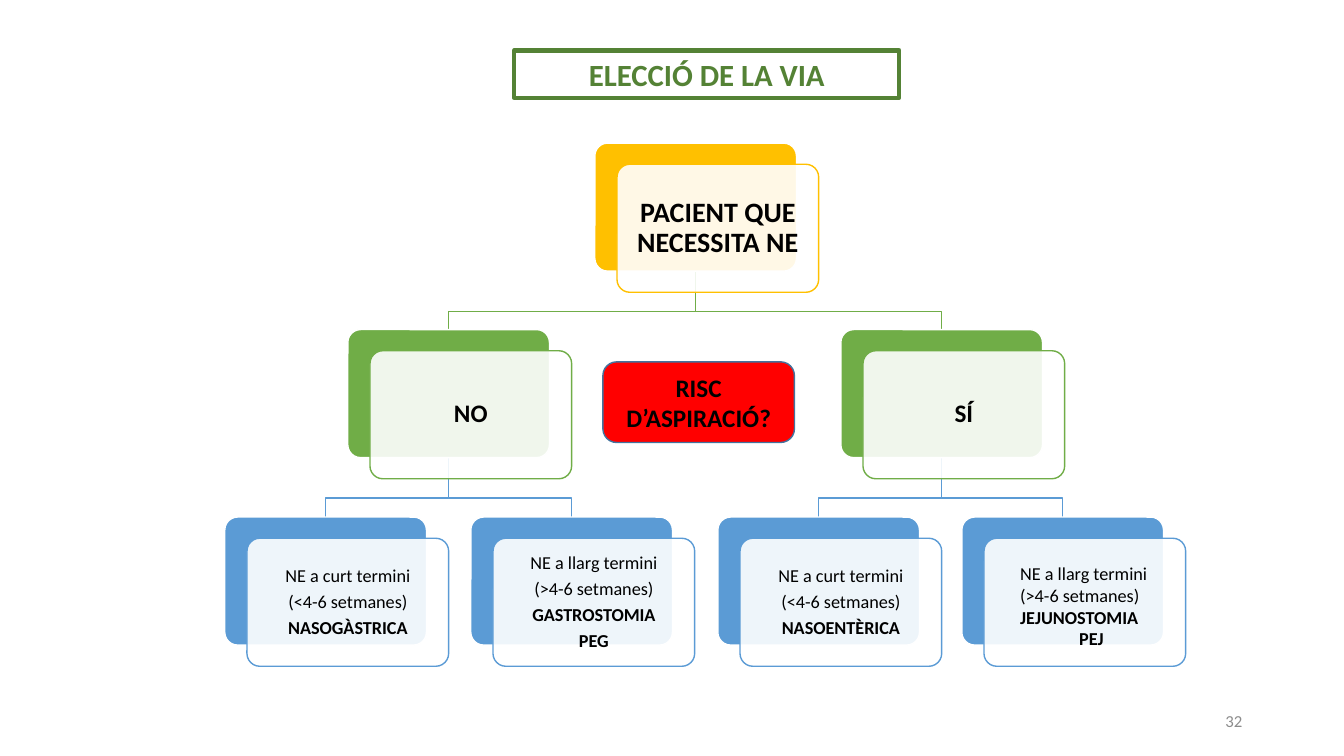
from lxml import etree
from pptx import Presentation
from pptx.dml.color import RGBColor
from pptx.enum import shapes, text
from pptx.oxml import ns
from pptx.util import Inches, Pt


class Theme:
    font = "Calibri"
    black, white, gray = "000000", "FFFFFF", "8C8C8C"
    gold, green, blue = "FFC000", "70AD47", "5B9BD5"
    red, edge, dark = "FF0000", "43739E", "548235"
    title, root, branch, leaf, small = 22, 20, 18, 13, 12


def write(shape, rows, size, color=Theme.black, inset=0.1, gap=False, align="CENTER"):
    """Fill a shape with rows of (words, bold); gap spaces them as in the tree."""
    frame = shape.text_frame
    frame.word_wrap = True
    frame.auto_size = text.MSO_AUTO_SIZE.NONE
    frame.vertical_anchor = text.MSO_ANCHOR.MIDDLE
    frame.margin_left = frame.margin_right = Inches(inset)
    frame.margin_top = frame.margin_bottom = Inches(min(inset, 0.05))
    for i, (words, bold) in enumerate(rows):
        para = frame.paragraphs[0] if i == 0 else frame.add_paragraph()
        para.alignment = getattr(text.PP_ALIGN, align)
        para.line_spacing = 0.9 if gap else 1.0
        para.space_before = Pt(0)
        para.space_after = Pt(size * 0.35 if gap else 0)
        run = para.add_run()
        run.text = words
        run.font.name, run.font.size, run.font.bold = Theme.font, Pt(size), bold
        run.font.color.rgb = RGBColor.from_string(color)


def box(x, y, w, h, fill, line, round=0.1):
    shape = slide.shapes.add_shape(
        shapes.MSO_SHAPE.ROUNDED_RECTANGLE, Inches(x), Inches(y), Inches(w), Inches(h))
    shape.adjustments[0] = round
    shape.shadow.inherit = False
    shape.fill.solid()
    shape.fill.fore_color.rgb = RGBColor.from_string(fill)
    shape.line.color.rgb = RGBColor.from_string(line)
    shape.line.width = Pt(1)
    return shape


deck = Presentation()
deck.slide_width, deck.slide_height = Inches(13.33), Inches(7.5)
slide = deck.slides.add_slide(deck.slide_layouts[5])

# Title
title = slide.shapes.title
title.left, title.top, title.width, title.height = map(Inches, (5.1, 0.5, 3.82, 0.47))
title.line.color.rgb = RGBColor.from_string(Theme.dark)
title.line.width = Pt(3)
write(title, [("ELECCIÓ DE LA VIA", True)], Theme.title, Theme.dark)

# Tree: name -> parent, left, level, rows
wide, high = 2, 1.27
tops = [1.42, 3.27, 5.13]
tints = [Theme.gold, Theme.green, Theme.blue]
sizes = [Theme.root, Theme.branch, Theme.leaf]
short = [("NE a curt termini", False), ("(<4-6 setmanes)", False)]
long = [("NE a llarg termini", False), ("(>4-6 setmanes)", False)]
tree = {
    "root": (None, 5.9, 0, [("PACIENT QUE NECESSITA NE", True)]),
    "no": ("root", 3.45, 1, [("NO", True)]),
    "yes": ("root", 8.34, 1, [("SÍ", True)]),
    "nasal": ("no", 2.23, 2, short + [("NASOGÀSTRICA", True)]),
    "peg": ("no", 4.67, 2, long + [("GASTROSTOMIA", True), ("PEG", True)]),
    "enteric": ("yes", 7.12, 2, short + [("NASOENTÈRICA", True)]),
    "pej": ("yes", 9.54, 2, []),
}

# Branch lines lie behind the cards
for parent, left, level, rows in tree.values():
    if parent is None:
        continue
    start = tree[parent][1] + wide / 2
    end = left + wide / 2
    foot = tops[level - 1] + high
    bend = foot + 0.4
    path = slide.shapes.build_freeform(Inches(start), Inches(foot))
    path.add_line_segments(
        [(Inches(x), Inches(y)) for x, y in
         ((start, bend), (end, bend), (end, tops[level]))], close=False)
    branch = path.convert_to_shape()
    branch.shadow.inherit = False
    branch.fill.background()
    branch.line.color.rgb = RGBColor.from_string(tints[level])
    branch.line.width = Pt(1)

# Each node is a solid card with a translucent one in front
for parent, left, level, rows in tree.values():
    box(left, tops[level], wide, high, tints[level], Theme.white)
    card = box(left + 0.22, tops[level] + 0.21, wide, high, Theme.white, tints[level])
    tone = card.fill._xPr.find(".//" + ns.qn("a:srgbClr"))
    etree.SubElement(tone, ns.qn("a:alpha"), val="90000")
    if rows:
        write(card, rows, sizes[level], inset=0.08 if level == 0 else 0.05, gap=True)

# The last leaf has its own, tighter text
note = slide.shapes.add_textbox(Inches(10.02), Inches(5.52), Inches(1.61), Inches(0.98))
write(note, long + [("JEJUNOSTOMIA", True), ("PEJ", True)], Theme.leaf, align="LEFT")
note.text_frame.paragraphs[-1].alignment = text.PP_ALIGN.CENTER

# Question between the branches
risk = box(5.98, 3.59, 1.9, 0.8, Theme.red, Theme.edge, round=0.17)
write(risk, [("RISC D’ASPIRACIÓ?", True)], Theme.branch)

# Page number
page = slide.shapes.add_textbox(Inches(9.42), Inches(6.95), Inches(3), Inches(0.4))
write(page, [("32", False)], Theme.small, Theme.gray, align="RIGHT")

deck.save("out.pptx")
